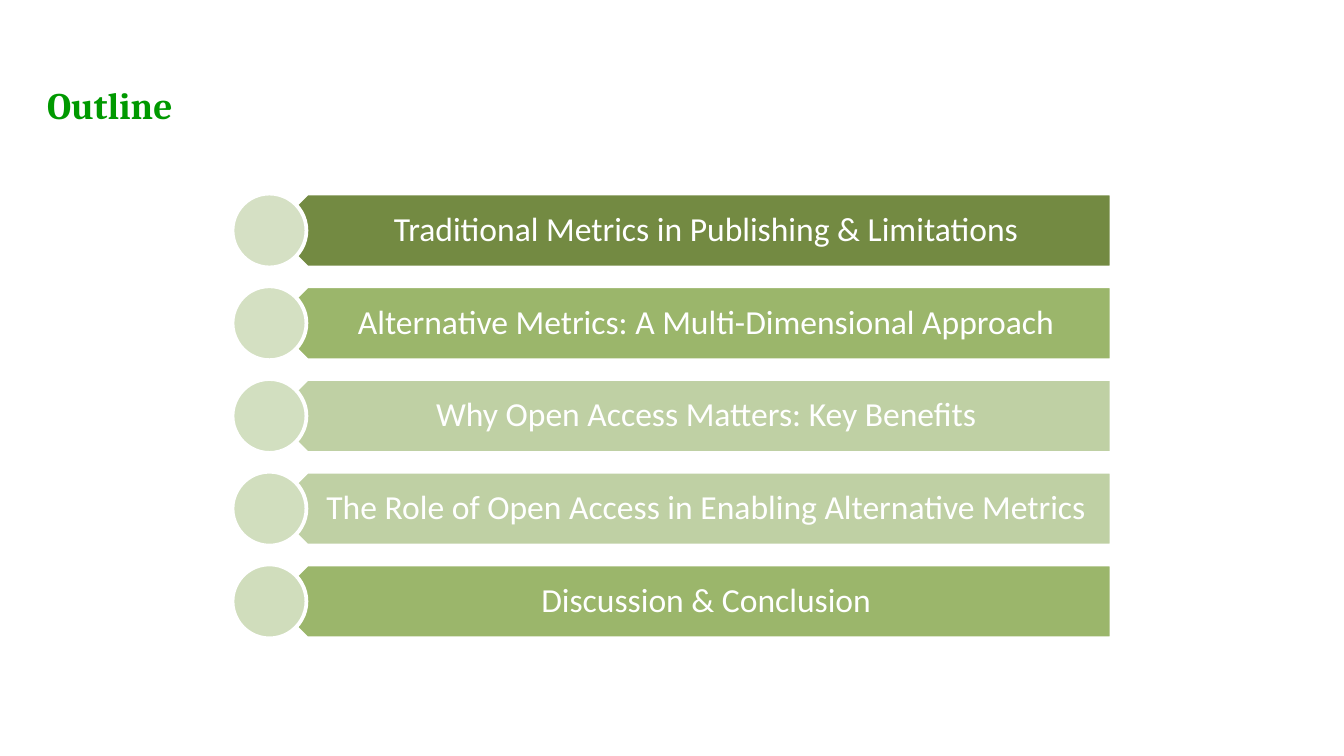
from dataclasses import dataclass

from pptx import Presentation
from pptx.dml.color import RGBColor
from pptx.enum.shapes import MSO_SHAPE as Preset
from pptx.enum.text import MSO_ANCHOR as Anchor, MSO_AUTO_SIZE as AutoSize, PP_ALIGN as Align
from pptx.util import Inches, Pt

WHITE = "FFFFFF"
GREEN = "009900"

# Row geometry, in inches
FIRST_TOP = 1.44
ROW_STEP = 0.69
ROW_HEIGHT = 0.55
CIRCLE_LEFT = 1.73
BAR_LEFT, BAR_WIDTH = 2.01, 6.26
LABEL_LEFT, LABEL_WIDTH = 2.14, 6.13


@dataclass
class Topic:
    text: str
    bar_color: str
    circle_color: str


TOPICS = [
    Topic("Traditional Metrics in Publishing & Limitations", "738A42", "D5E0C4"),
    Topic("Alternative Metrics: A Multi-Dimensional Approach", "9BB66B", "D4E0C2"),
    Topic("Why Open Access Matters: Key Benefits", "BFD0A4", "D2DFC0"),
    Topic("The Role of Open Access in Enabling Alternative Metrics", "BFD0A4", "D1DEBE"),
    Topic("Discussion & Conclusion", "9BB66B", "D0DDBC"),
]


def rgb(color: str) -> RGBColor:
    return RGBColor.from_string(color)


def add_run(paragraph, text: str, font: str, size: float, color: str, bold: bool = False) -> None:
    run = paragraph.add_run()
    run.text = text
    run.font.name = font
    run.font.size = Pt(size)
    run.font.bold = bold
    run.font.color.rgb = rgb(color)


def add_filled_shape(shapes, preset: Preset, left: float, top: float, width: float, color: str):
    shape = shapes.add_shape(preset, Inches(left), Inches(top), Inches(width), Inches(ROW_HEIGHT))
    shape.shadow.inherit = False
    shape.fill.solid()
    shape.fill.fore_color.rgb = rgb(color)
    shape.line.color.rgb = rgb(WHITE)
    shape.line.width = Pt(2)
    return shape


def add_label(shapes, text: str, top: float) -> None:
    label = shapes.add_textbox(Inches(LABEL_LEFT), Inches(top), Inches(LABEL_WIDTH), Inches(ROW_HEIGHT))
    frame = label.text_frame
    frame.word_wrap = True
    frame.vertical_anchor = Anchor.MIDDLE
    frame.margin_left, frame.margin_right = Inches(0.24), Inches(0.14)
    frame.margin_top = frame.margin_bottom = Inches(0.07)
    paragraph = frame.paragraphs[0]
    paragraph.alignment = Align.CENTER
    paragraph.line_spacing = 0.9
    add_run(paragraph, text, "Calibri", 18, WHITE)


def add_topic(shapes, topic: Topic, top: float) -> None:
    bar = add_filled_shape(shapes, Preset.PENTAGON, BAR_LEFT, top, BAR_WIDTH, topic.bar_color)
    bar.rotation = 180
    add_label(shapes, topic.text, top)
    add_filled_shape(shapes, Preset.OVAL, CIRCLE_LEFT, top, ROW_HEIGHT, topic.circle_color)


def set_title(title, text: str) -> None:
    title.left, title.top = Inches(0.25), Inches(0.56)
    title.width, title.height = Inches(7.17), Inches(0.75)
    frame = title.text_frame
    frame.auto_size = AutoSize.NONE
    frame.vertical_anchor = Anchor.TOP
    paragraph = frame.paragraphs[0]
    paragraph.alignment = Align.LEFT
    add_run(paragraph, text, "Cambria", 20, GREEN, bold=True)


def main() -> None:
    # Widescreen 16:9 slide
    presentation = Presentation()
    presentation.slide_width = Inches(10)
    presentation.slide_height = Inches(10 * 9 / 16)
    slide = presentation.slides.add_slide(presentation.slide_layouts[5])

    # Title
    set_title(slide.shapes.title, "Outline")

    # Topic rows, grouped as one diagram
    diagram = slide.shapes.add_group_shape()
    for index, topic in enumerate(TOPICS):
        add_topic(diagram.shapes, topic, FIRST_TOP + index * ROW_STEP)

    presentation.save("out.pptx")


if __name__ == "__main__":
    main()
